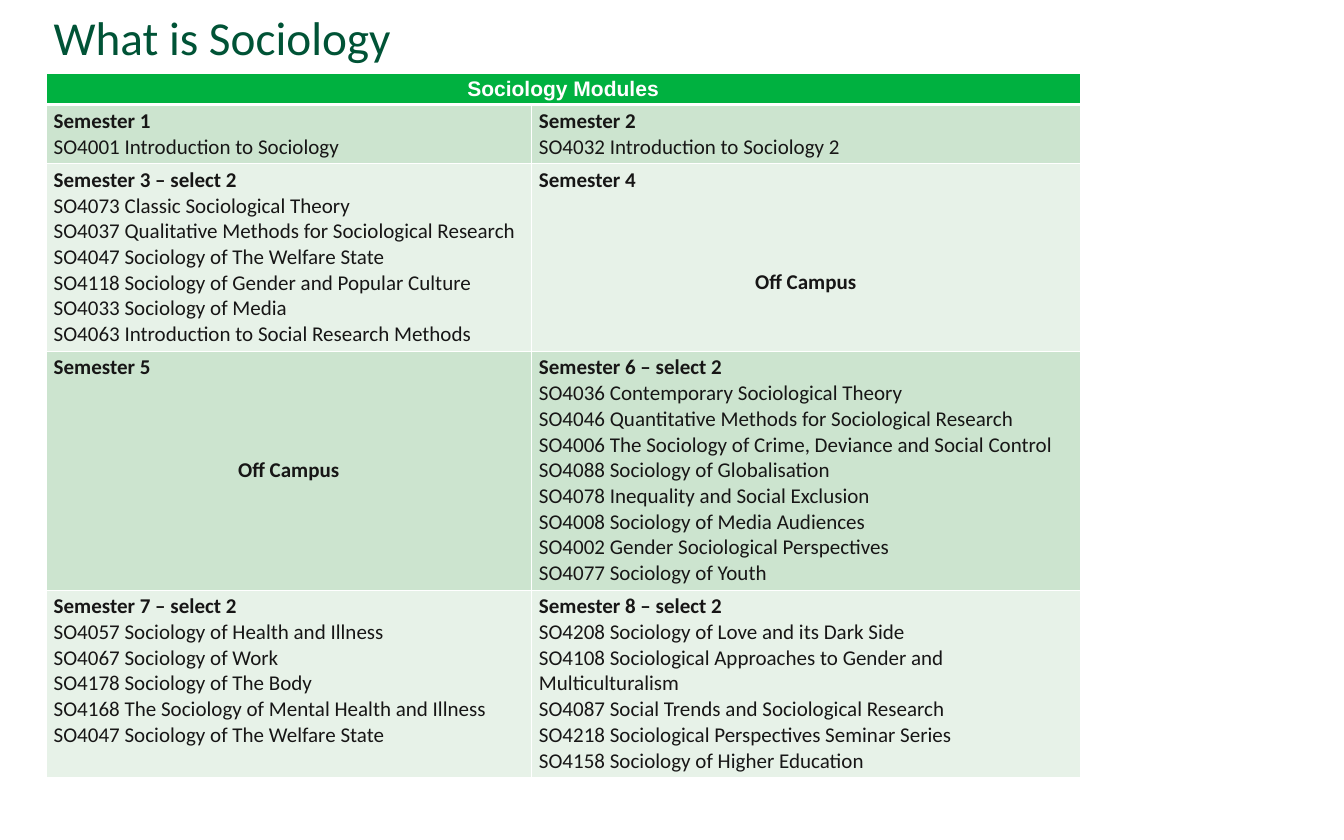
from dataclasses import dataclass

from lxml import etree
from pptx import Presentation
from pptx.dml.color import RGBColor
from pptx.enum.text import MSO_ANCHOR, PP_ALIGN
from pptx.oxml.ns import qn
from pptx.util import Inches, Pt

CENTER = PP_ALIGN.CENTER
LEFT = PP_ALIGN.LEFT
TOP = MSO_ANCHOR.TOP
MIDDLE = MSO_ANCHOR.MIDDLE


@dataclass(frozen=True)
class Theme:
    title_color: str = "005336"
    text_color: str = "171616"
    white: str = "FFFFFF"
    header_fill: str = "00B140"
    row_fills: tuple = ("CCE4CF", "E7F2E8")
    body_font: str = "Calibri"
    header_font: str = "Arial"
    title_size: int = 45
    text_size: int = 20
    off_campus_gap: float = 73.2  # three text lines
    border: int = 1
    header_border: int = 3


THEME = Theme()
OFF_CAMPUS = "Off Campus"
COLUMN_WIDTHS = (6.42, 7.26)
ROW_HEIGHTS = (0.4, 0.78, 2.48, 3.16, 2.48)

# Each row holds two semesters: heading first, then its modules
SEMESTER_ROWS = [
    (
        ["Semester 1", "SO4001 Introduction to Sociology"],
        ["Semester 2", "SO4032 Introduction to Sociology 2"],
    ),
    (
        [
            "Semester 3 – select 2",
            "SO4073 Classic Sociological Theory",
            "SO4037 Qualitative Methods for Sociological Research",
            "SO4047 Sociology of The Welfare State",
            "SO4118 Sociology of Gender and Popular Culture",
            "SO4033 Sociology of Media",
            "SO4063 Introduction to Social Research Methods",
        ],
        ["Semester 4", OFF_CAMPUS],
    ),
    (
        ["Semester 5", OFF_CAMPUS],
        [
            "Semester 6 – select 2",
            "SO4036 Contemporary Sociological Theory",
            "SO4046 Quantitative Methods for Sociological Research",
            "SO4006 The Sociology of Crime, Deviance and Social Control",
            "SO4088 Sociology of Globalisation",
            "SO4078 Inequality and Social Exclusion",
            "SO4008 Sociology of Media Audiences",
            "SO4002 Gender Sociological Perspectives",
            "SO4077 Sociology of Youth",
        ],
    ),
    (
        [
            "Semester 7 – select 2",
            "SO4057 Sociology of Health and Illness",
            "SO4067 Sociology of Work",
            "SO4178 Sociology of The Body",
            "SO4168 The Sociology of Mental Health and Illness",
            "SO4047 Sociology of The Welfare State",
        ],
        [
            "Semester 8 – select 2",
            "SO4208 Sociology of Love and its Dark Side",
            "SO4108 Sociological Approaches to Gender and Multiculturalism",
            "SO4087 Social Trends and Sociological Research",
            "SO4218 Sociological Perspectives Seminar Series",
            "SO4158 Sociology of Higher Education",
        ],
    ),
]


def write_para(para, text, size, color, font=THEME.body_font, bold=False, align=LEFT):
    para.text = text
    para.alignment = align
    para.font.name = font
    para.font.size = Pt(size)
    para.font.bold = bold
    para.font.color.rgb = RGBColor.from_string(color)


def style_cell(cell, fill, top=THEME.border, bottom=THEME.border):
    # Borders come before the fill in the cell properties
    properties = cell._tc.get_or_add_tcPr()
    widths = {"L": THEME.border, "R": THEME.border, "T": top, "B": bottom}
    for side, width in widths.items():
        line = etree.SubElement(properties, qn(f"a:ln{side}"), w=str(Pt(width)))
        solid = etree.SubElement(line, qn("a:solidFill"))
        etree.SubElement(solid, qn("a:srgbClr"), val=THEME.white)
    cell.fill.solid()
    cell.fill.fore_color.rgb = RGBColor.from_string(fill)


def add_title(page, text):
    box = page.shapes.add_textbox(Inches(0.61), Inches(0.14), Inches(15.33), Inches(1.14))
    frame = box.text_frame
    frame.word_wrap = True
    frame.vertical_anchor = TOP
    para = frame.paragraphs[0]
    write_para(para, text, THEME.title_size, THEME.title_color)
    para.line_spacing = 0.9


def fill_header(table, text):
    cells = list(table.rows[0].cells)
    for cell in cells:
        style_cell(cell, THEME.header_fill, bottom=THEME.header_border)
    header = cells[0]
    header.merge(cells[-1])
    header.vertical_anchor = MIDDLE
    header.margin_top = header.margin_bottom = Inches(0.04)
    write_para(header.text_frame.paragraphs[0], text, THEME.text_size, THEME.white,
               THEME.header_font, bold=True, align=CENTER)


def fill_semester(cell, lines):
    frame = cell.text_frame
    for index, text in enumerate(lines):
        para = frame.add_paragraph() if index else frame.paragraphs[0]
        away = text == OFF_CAMPUS
        write_para(para, text, THEME.text_size, THEME.text_color,
                   bold=index == 0 or away, align=CENTER if away else LEFT)
        if away:
            para.space_before = Pt(THEME.off_campus_gap)


def add_module_table(page):
    frame = page.shapes.add_table(
        len(ROW_HEIGHTS), len(COLUMN_WIDTHS), Inches(0.61), Inches(0.97),
        Inches(sum(COLUMN_WIDTHS)), Inches(sum(ROW_HEIGHTS)))
    table = frame.table
    for column, width in zip(table.columns, COLUMN_WIDTHS):
        column.width = Inches(width)
    for row, height in zip(table.rows, ROW_HEIGHTS):
        row.height = Inches(height)

    fill_header(table, "Sociology Modules")
    for index, semesters in enumerate(SEMESTER_ROWS):
        top = THEME.border if index else THEME.header_border
        for cell, lines in zip(table.rows[index + 1].cells, semesters):
            style_cell(cell, THEME.row_fills[index % 2], top=top)
            fill_semester(cell, lines)


def main():
    deck = Presentation()
    deck.slide_width = Inches(17.78)
    deck.slide_height = Inches(11.11)
    page = deck.slides.add_slide(deck.slide_layouts[6])
    add_title(page, "What is Sociology")
    add_module_table(page)
    deck.save("out.pptx")


if __name__ == "__main__":
    main()
